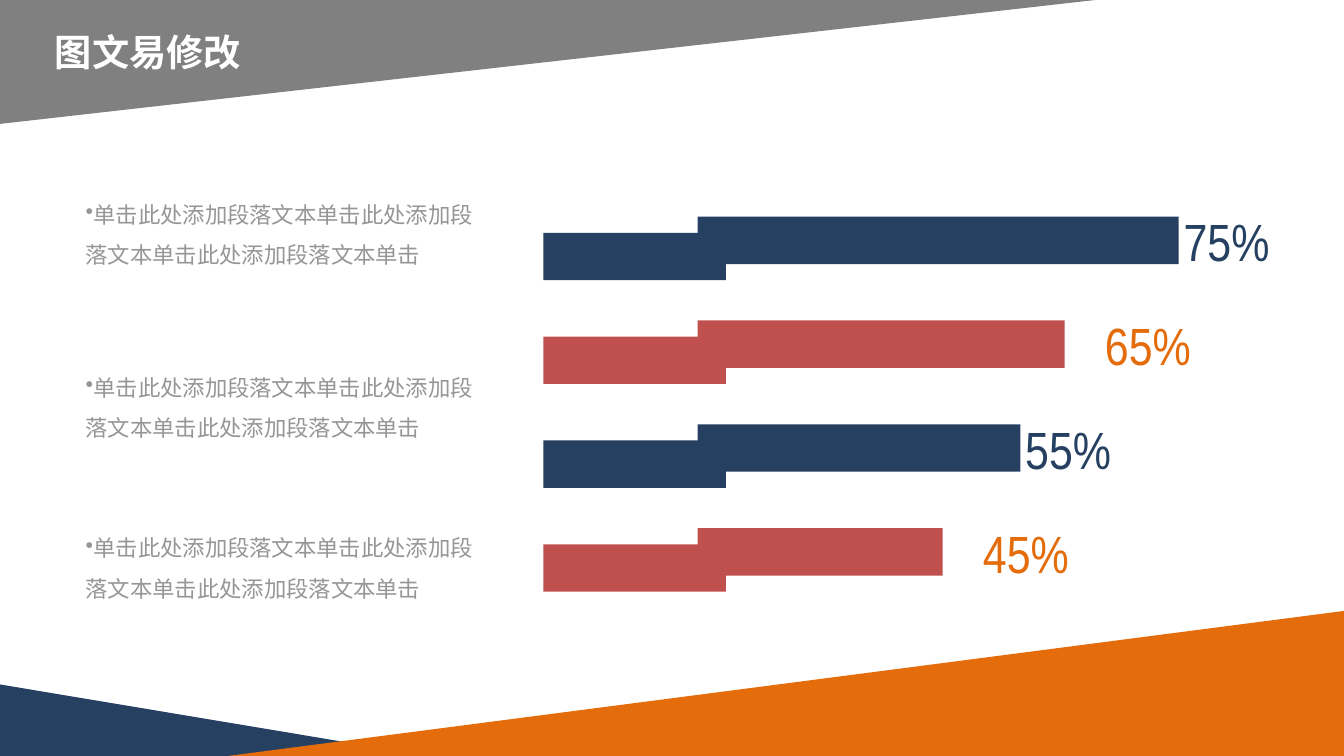
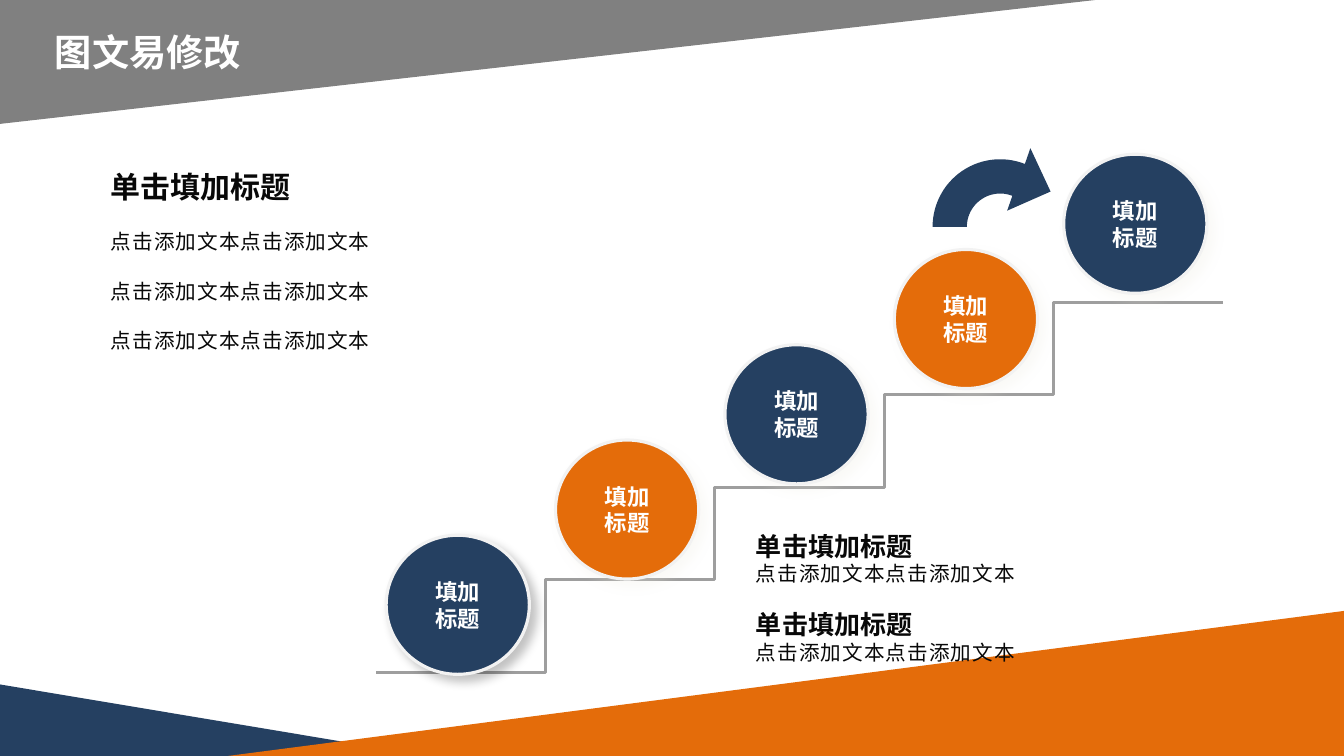
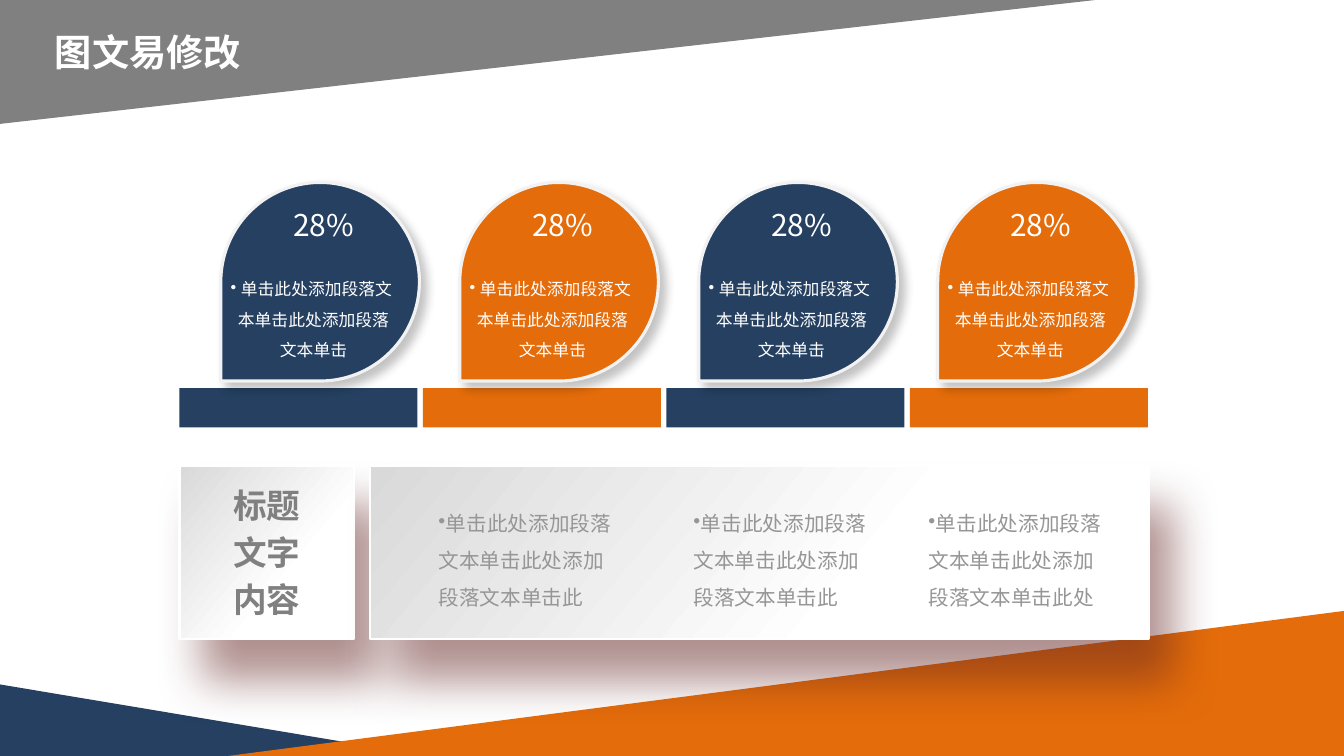
from math import cos, radians, sin

from lxml.etree import SubElement
from pptx import Presentation
from pptx.dml.color import RGBColor
from pptx.enum.shapes import MSO_SHAPE as Kind
from pptx.enum.text import MSO_ANCHOR as Anchor, MSO_AUTO_SIZE as Fit, PP_ALIGN as Align
from pptx.oxml.ns import qn
from pptx.util import Inches, Pt


class Theme:
    navy, orange, red = "254061", "E46C0A", "C0504D"
    gray, text_gray, rail = "808080", "969696", "9E9E9E"
    white, rim, silver, black = "FFFFFF", "F2F2F2", "D9D9D9", "080808"
    sans, narrow = "Noto Sans CJK SC", "Arial Narrow"
    rim_line = (rim, 2.25)
    # colour, opacity %, blur, distance, angle
    dark_shadow = ("000000", 23, 7, 5.9, 45)
    pale_shadow = ("EEECE1", 23, 7, 5.9, 45)
    panel_shadow = ("632523", 50, 33, 33, 60)

    centered = {"alignment": Align.CENTER}
    airy = {"line_spacing": 1.5, "space_before": Pt(13.3)}
    title = {"size": 26.6, "bold": True, "color": white, "para": centered}
    percent = {"size": 37.4, "font": narrow, "para": centered}
    body = {"size": 16, "color": text_gray, "para": airy, "bullet": "•"}
    panel_body = {**body, "size": 14.7}
    drop_body = {**body, "size": 12, "color": white, "para": {**airy, **centered}}
    drop_percent = {"size": 21.4, "color": white, "para": centered}
    circle = {"size": 16, "bold": True, "color": white, "para": centered}
    panel_title = {"size": 24, "bold": True, "color": gray,
                   "para": {**centered, "space_before": Pt(4.8)}}
    heading = {"size": 21.4, "bold": True, "color": black}
    subheading = {"size": 18.6, "bold": True, "color": black}
    next_subheading = {**subheading, "para": {"space_before": Pt(16)}}
    detail = {"size": 14.7, "color": black, "tracking": 70}
    spaced_detail = {**detail, "para": {"space_before": Pt(17.7)}}


def style_shape(shape, fill=None, line=None, shadow=None):
    """Give a shape its fill, its (colour, width) line and its outer shadow."""
    shape.shadow.inherit = False
    if fill:
        shape.fill.solid()
        shape.fill.fore_color.rgb = RGBColor.from_string(fill)
    else:
        shape.fill.background()
    if line:
        shape.line.color.rgb = RGBColor.from_string(line[0])
        shape.line.width = Pt(line[1])
    else:
        shape.line.fill.background()
    if shadow:
        color, opacity, blur, distance, angle = shadow
        effects = shape.element.spPr.find(qn("a:effectLst"))
        outer = SubElement(effects, qn("a:outerShdw"), blurRad=str(Pt(blur)), dist=str(Pt(distance)),
                           dir=str(angle * 60000), algn="ctr", rotWithShape="0")
        tone = SubElement(outer, qn("a:srgbClr"), val=color)
        SubElement(tone, qn("a:alpha"), val=str(opacity * 1000))
    return shape


def write(shape, lines, **frame_format):
    """Fill a shape with one paragraph for each (text, style) pair."""
    frame = shape.text_frame
    for name, value in {"word_wrap": True, "auto_size": Fit.SHAPE_TO_FIT_TEXT, **frame_format}.items():
        setattr(frame, name, value)
    for index, (text, style) in enumerate(lines):
        para = frame.add_paragraph() if index else frame.paragraphs[0]
        for name, value in {"alignment": Align.LEFT, **style.get("para", {})}.items():
            setattr(para, name, value)
        if "bullet" in style:
            SubElement(para._p.get_or_add_pPr(), qn("a:buChar"), char=style["bullet"])
        span = para.add_run()
        span.text = text
        font_name = style.get("font", Theme.sans)
        font_format = {"size": Pt(style["size"]), "bold": style.get("bold", False), "name": font_name}
        for name, value in font_format.items():
            setattr(span.font, name, value)
        span.font.color.rgb = RGBColor.from_string(style["color"])
        run_format = span._r.get_or_add_rPr()
        SubElement(run_format, qn("a:ea"), typeface=font_name)
        if "tracking" in style:
            run_format.set("spc", str(style["tracking"]))


deck = Presentation()
deck.slide_width, deck.slide_height = Inches(13.33), Inches(7.5)
blank = deck.slide_layouts[6]
for placeholder in list(blank.placeholders):
    blank.shapes.element.remove(placeholder.element)
pages = [deck.slides.add_slide(blank) for _ in range(3)]
bars_page, stairs_page, drops_page = pages

# Shared bands live on the layout
for box, color, flip in [
    ((0, 6.79, 4.25, 0.71), Theme.navy, None),
    ((2.26, 6.06, 11.08, 1.44), Theme.orange, "flipH"),
    ((0, 0, 10.87, 1.23), Theme.gray, "flipV"),
]:
    band = style_shape(bars_page.shapes.add_shape(Kind.RIGHT_TRIANGLE, *map(Inches, box)), color)
    if flip:
        band.element.spPr.find(qn("a:xfrm")).set(flip, "1")
    blank.shapes.element.append(band.element)

no_margins = {f"margin_{side}": 0 for side in ("left", "top", "right", "bottom")}
for page in pages:
    title = page.shapes.add_textbox(0, Inches(0.29), Inches(2.94), Inches(0.45))
    write(title, [("图文易修改", Theme.title)], **no_margins)

sentence = "单击此处添加段落文本"

# Slide 1: stepped bars
bar_left = 6.92
for row, (label, width, gap, bar_color, label_color) in enumerate([
    ("75%", 4.77, -0.35, Theme.navy, Theme.navy),
    ("65%", 3.64, 0, Theme.red, Theme.orange),
    ("55%", 3.2, -0.35, Theme.navy, Theme.navy),
    ("45%", 2.43, 0, Theme.red, Theme.orange),
]):
    top = 2.15 + 1.03 * row
    for box in [(5.39, top + 0.16, 1.81, 0.47), (bar_left, top, width, 0.47)]:
        style_shape(bars_page.shapes.add_shape(Kind.RECTANGLE, *map(Inches, box)), bar_color)
    label_box = (bar_left + width + gap, top - 0.12, 1.65, 0.73)
    write(bars_page.shapes.add_textbox(*map(Inches, label_box)),
          [(label, {**Theme.percent, "color": label_color})])

for top in (1.81, 3.53, 5.12):
    note = bars_page.shapes.add_textbox(*map(Inches, (0.75, top, 4.07, 0.91)))
    write(note, [(sentence * 3 + "单击", Theme.body)])

# Slide 2: staircase
step_width, step_height = 1.68, 0.9175
stair_points = []
for step in range(5):
    x, y = 3.73 + step_width * step, 6.67 - step_height * step
    stair_points += [(Inches(x), Inches(y)), (Inches(x + step_width), Inches(y))]
builder = stairs_page.shapes.build_freeform(*stair_points[0])
builder.add_line_segments(stair_points[1:], close=False)
style_shape(builder.convert_to_shape(), line=(Theme.rail, 2))

caption = "点击添加文本点击添加文本"
heading = "单击填加标题"
for box, lines in [
    ((1, 1.62, 4.15, 1.95), [(heading, Theme.heading)] + [(caption, Theme.spaced_detail)] * 3),
    ((7.4, 5.21, 5.46, 1.45), [(heading, Theme.subheading), (caption, Theme.detail),
                               (heading, Theme.next_subheading), (caption, Theme.detail)]),
]:
    write(stairs_page.shapes.add_textbox(*map(Inches, box)), lines)

# Curved arrow: outer arc, head, inner arc back
center_x, center_y = 9.92, 2.25
angles = [radians(180 - 111.5 * part / 30) for part in range(31)]
outer_arc, inner_arc = (
    [(center_x + radius * cos(angle), center_y - radius * sin(angle)) for angle in angles]
    for radius in (0.67, 0.33)
)
arrow_head = [(10.22, 1.47), (10.42, 1.9), (9.99, 2.09)]
arrow_points = [(Inches(x), Inches(y)) for x, y in outer_arc + arrow_head + inner_arc[::-1]]
builder = stairs_page.shapes.build_freeform(*arrow_points[0])
builder.add_line_segments(arrow_points[1:])
style_shape(builder.convert_to_shape(), Theme.navy)

for step in range(5):
    box = (3.83 + step_width * step, 5.31 - 0.945 * step, 1.42, 1.38)
    circle = style_shape(stairs_page.shapes.add_shape(Kind.OVAL, *map(Inches, box)),
                         (Theme.navy, Theme.orange)[step % 2], Theme.rim_line,
                         Theme.pale_shadow if step else Theme.dark_shadow)
    write(circle, [("填加", Theme.circle), ("标题", Theme.circle)],
          auto_size=Fit.NONE, vertical_anchor=Anchor.MIDDLE, **no_margins)

# Slide 3: drops over a colour strip
for column in range(4):
    color = (Theme.navy, Theme.orange)[column % 2]
    strip_box = (1.78 + 2.415 * column, 3.85, 2.36, 0.39)
    style_shape(drops_page.shapes.add_shape(Kind.RECTANGLE, *map(Inches, strip_box)), color)
    left = 2.19 + 2.37 * column
    drop = drops_page.shapes.add_shape(Kind.TEAR, *map(Inches, (left, 1.81, 1.97, 1.97)))
    style_shape(drop, color, Theme.rim_line, Theme.dark_shadow).rotation = 180
    for box, text, style in [
        ((left + 0.47, 2, 1.1, 0.46), "28%", Theme.drop_percent),
        ((left, 2.62, 1.84, 1.01), sentence * 2 + "单击", Theme.drop_body),
    ]:
        write(drops_page.shapes.add_textbox(*map(Inches, box)), [(text, style)])

panels = []
for left, width in [(1.78, 1.73), (3.67, 7.72)]:
    panel = drops_page.shapes.add_shape(Kind.RECTANGLE, *map(Inches, (left, 4.62, width, 1.72)))
    style_shape(panel, Theme.white, (Theme.white, 1.75), Theme.panel_shadow)
    panel.fill.gradient()
    panel.fill.gradient_angle = 140
    for stop, (position, color) in zip(panel.fill.gradient_stops, [(0.36, Theme.white), (1, Theme.silver)]):
        stop.position = position
        stop.color.rgb = RGBColor.from_string(color)
    panels.append(panel)
write(panels[0], [(word, Theme.panel_title) for word in ("标题", "文字", "内容")],
      auto_size=Fit.NONE, vertical_anchor=Anchor.MIDDLE)

for left, ending in [(4.25, "单击此"), (6.78, "单击此"), (9.11, "单击此处")]:
    note = drops_page.shapes.add_textbox(*map(Inches, (left, 4.9, 2.03, 1.21)))
    write(note, [(sentence * 2 + ending, Theme.panel_body)])

deck.save("out.pptx")
